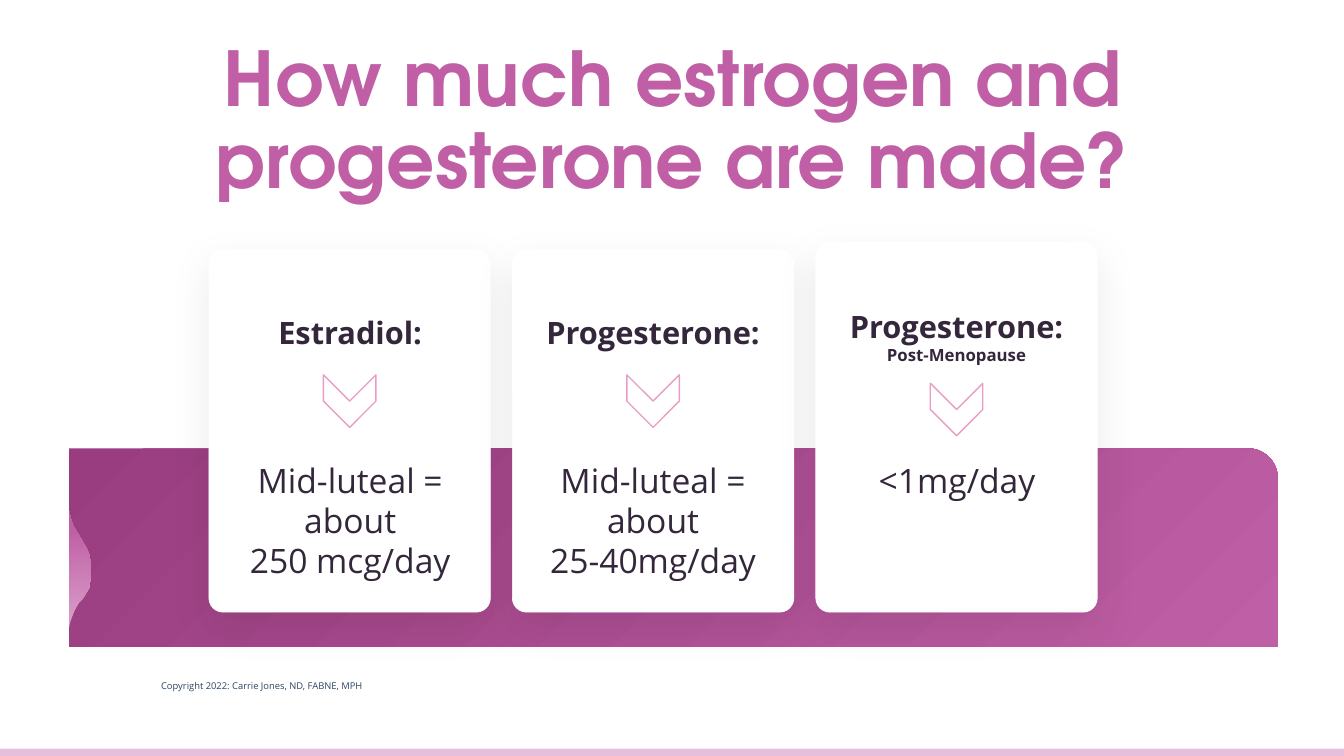
from lxml.etree import SubElement
from pptx import Presentation
from pptx.dml.color import RGBColor
from pptx.enum.shapes import MSO_SHAPE
from pptx.enum.text import MSO_ANCHOR, MSO_AUTO_SIZE, PP_ALIGN
from pptx.oxml.ns import qn
from pptx.util import Pt

PX = 9525
BODY_FONT = "Open Sans"
INK = "34273C"
ORCHID = "C05FA5"
CARD_LEFT, CARD_STEP, CARD_WIDTH, CARD_BOTTOM = 199, 289, 268, 583
CHEVRON_SIZE = 50
WAVE = [(66, 597), (67, 592), (68, 589), (71, 581), (75, 574), (79, 570),
        (82, 565), (85, 560), (87, 552), (87, 543), (87, 534), (83, 523),
        (73, 506), (70, 501), (68, 496), (67, 492), (66, 487)]
CARDS = [
    {"top": 238, "heading": [("Estradiol:", 22)], "heading_box": (294, 215, 45),
     "chevron_top": 357, "amount": ["Mid-luteal = about", "250 mcg/day"],
     "amount_box": (215, 126)},
    {"top": 238, "heading": [("Progesterone:", 22)], "heading_box": (294, 244, 45),
     "chevron_top": 357, "amount": ["Mid-luteal = about", "25-40mg/day"],
     "amount_box": (244, 126)},
    {"top": 231, "heading": [("Progesterone:", 22), ("Post-Menopause", 12)],
     "heading_box": (288, 256, 64), "chevron_top": 365, "amount": ["<1mg/day"],
     "amount_box": (231, 48)},
]


def rgb(value):
    """Turn a hex string into a colour."""
    return RGBColor.from_string(value)


def emu(*lengths):
    """Turn pixel lengths into EMU."""
    return [length * PX for length in lengths]


def apply(target, values):
    """Set each attribute named in a dict."""
    for name, value in values.items():
        setattr(target, name, value)


def write(frame, lines, color, font=BODY_FONT, bold=False, align=PP_ALIGN.CENTER, spacing=None):
    """Fill a text frame with one paragraph per (text, size) pair."""
    for index, (text, size) in enumerate(lines):
        paragraph = frame.add_paragraph() if index else frame.paragraphs[0]
        apply(paragraph, {"alignment": align, "line_spacing": spacing})
        run = paragraph.add_run()
        run.text = text
        apply(run.font, {"name": font, "size": Pt(size), "bold": bold})
        run.font.color.rgb = rgb(color)


def add_text(slide, box, lines, color, wrap=True, **style):
    """Add a text box that grows with its text."""
    frame = slide.shapes.add_textbox(*emu(*box)).text_frame
    apply(frame, {"word_wrap": wrap, "auto_size": MSO_AUTO_SIZE.SHAPE_TO_FIT_TEXT})
    write(frame, lines, color, **style)


def add_block(slide, kind, box, fill=None, line=None, width=1):
    """Add a preset shape with a plain fill and outline."""
    block = slide.shapes.add_shape(kind, *emu(*box))
    block.shadow.inherit = False
    if fill:
        block.fill.solid()
        block.fill.fore_color.rgb = rgb(fill)
    else:
        block.fill.background()
    if line:
        block.line.color.rgb = rgb(line)
        block.line.width = Pt(width)
    else:
        block.line.fill.background()
    return block


def blend(shape, stops, angle):
    """Give a shape a two-stop linear gradient."""
    shape.fill.gradient()
    shape.fill.gradient_angle = angle
    for stop, (position, color) in zip(shape.fill.gradient_stops, stops):
        stop.position = position
        stop.color.rgb = rgb(color)


def add_soft_shadow(shape):
    """Give a shape a faint, wide shadow below it."""
    effects = shape._element.spPr.find(qn("a:effectLst"))
    shadow = SubElement(effects, qn("a:outerShdw"), blurRad=str(Pt(30)),
                        dist=str(Pt(10)), dir="5400000", algn="t", rotWithShape="0")
    black = SubElement(shadow, qn("a:srgbClr"), val="000000")
    SubElement(black, qn("a:alpha"), val="8000")


def add_title(slide, text):
    """Place and format the title placeholder."""
    title = slide.shapes.title
    apply(title, dict(zip(("left", "top", "width", "height"), emu(175, 79, 931, 76))))
    apply(title.text_frame, {"word_wrap": True, "auto_size": MSO_AUTO_SIZE.NONE,
                             "vertical_anchor": MSO_ANCHOR.MIDDLE})
    write(title.text_frame, [(text, 54)], ORCHID, "TeX Gyre Adventor", bold=True, spacing=0.9)


def add_band(slide):
    """Draw the purple band and the wave at its left edge."""
    band = add_block(slide, MSO_SHAPE.ROUND_1_RECTANGLE, (66, 427, 1151, 189))
    band.adjustments[0] = 0.15
    blend(band, [(0, "993D80"), (1, "BF5FA5")], 315)
    builder = slide.shapes.build_freeform(*WAVE[0], scale=PX)
    builder.add_line_segments(WAVE[1:], close=True)
    wave = builder.convert_to_shape()
    wave.shadow.inherit = False
    wave.line.fill.background()
    blend(wave, [(0, "D99FC9"), (0.85, "BF5FA5")], 90)


def add_card_back(slide, left, top):
    """Draw the white panel of a card."""
    panel = add_block(slide, MSO_SHAPE.ROUNDED_RECTANGLE,
                      (left, top, CARD_WIDTH, CARD_BOTTOM - top), "FFFFFF", "FFFFFF", 0.5)
    panel.adjustments[0] = 0.05
    add_soft_shadow(panel)


def add_card(slide, left, card):
    """Add a card with its heading, chevron and daily amount."""
    add_card_back(slide, left, card["top"])
    center = left + CARD_WIDTH // 2
    top, width, height = card["heading_box"]
    add_text(slide, (center - width // 2, top, width, height), card["heading"], INK, bold=True)
    width, height = card["amount_box"]
    add_text(slide, (center - width // 2, 433, width, height),
             [(line, 24) for line in card["amount"]], INK)
    chevron = add_block(slide, MSO_SHAPE.CHEVRON,
                        (center - CHEVRON_SIZE // 2, card["chevron_top"],
                         CHEVRON_SIZE, CHEVRON_SIZE), line="E99DC5")
    chevron.rotation = 90


def main():
    """Build the slide and save it."""
    deck = Presentation()
    apply(deck, {"slide_width": 1280 * PX, "slide_height": 720 * PX})
    slide = deck.slides.add_slide(deck.slide_layouts[5])
    add_text(slide, (144, 643, 213, 20), [("Copyright 2022: Carrie Jones, ND, FABNE, MPH", 6.7)],
             "2B455F", wrap=False, align=PP_ALIGN.LEFT)
    add_block(slide, MSO_SHAPE.RECTANGLE, (0, 713, 1280, 7), "E5BFDB")
    add_title(slide, "How much estrogen and progesterone are made?")
    add_band(slide)
    for index, card in enumerate(CARDS):
        add_card(slide, CARD_LEFT + index * CARD_STEP, card)
    deck.save("out.pptx")


if __name__ == "__main__":
    main()
